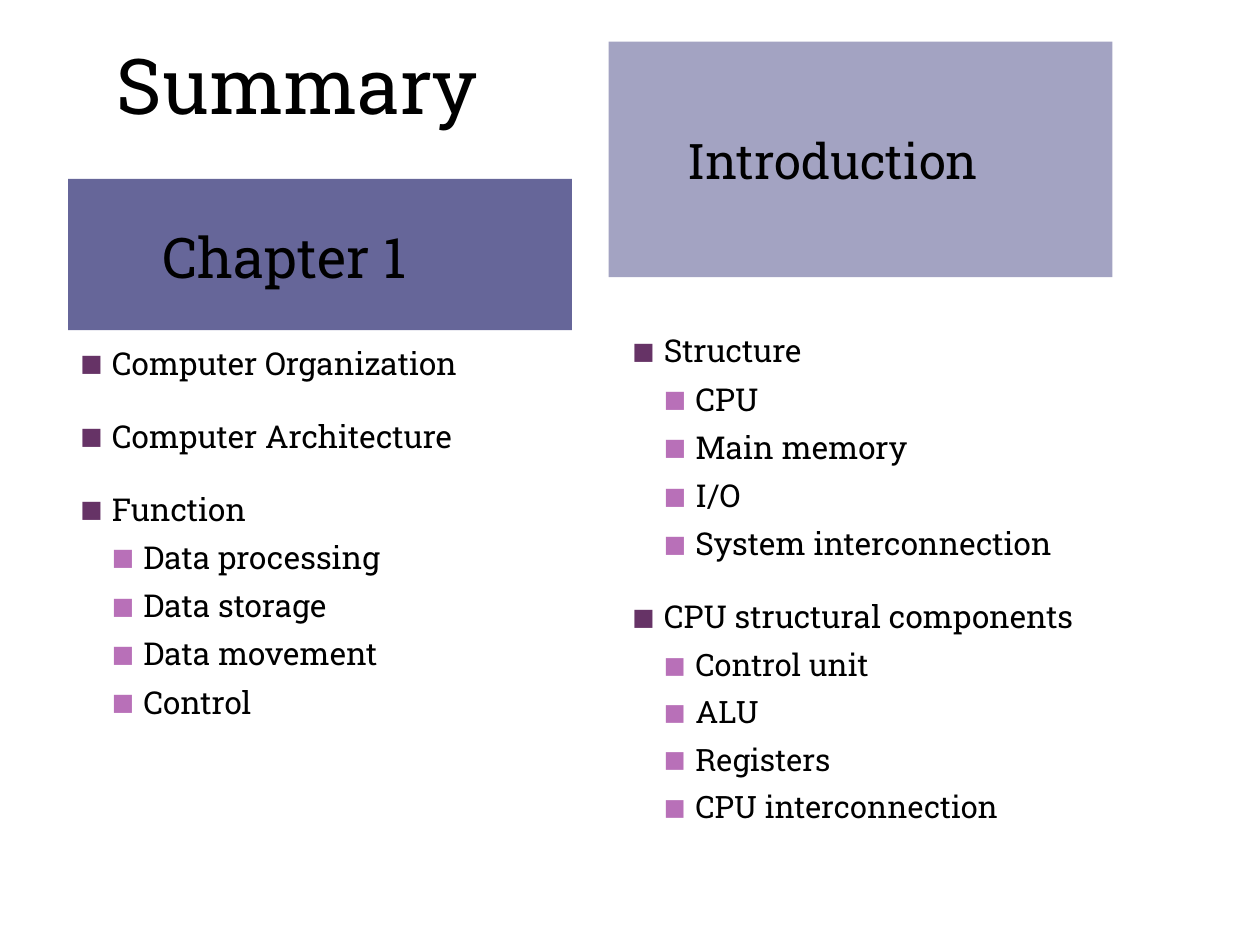
"""Build the two-column summary slide for the introduction chapter."""
from lxml.etree import SubElement
from pptx import Presentation
from pptx.dml.color import RGBColor
from pptx.enum.shapes import MSO_SHAPE as Shape
from pptx.enum.text import MSO_ANCHOR as Anchor, PP_ALIGN as Align
from pptx.oxml.ns import qn
from pptx.util import Inches, Pt

FONT = "Roboto Slab"
LEVELS = [
    {"indent": 0.25, "before": 20, "colour": "663366"},
    {"indent": 0.5, "before": 6, "colour": "B870B8"},
]
BANNERS = [
    ("Chapter 1", 32, "666699", (0.54, 1.42, 4, 1.2), (0.1, 0.03, 0.66, 0)),
    ("Introduction", 28, "A3A3C2", (4.83, 0.33, 4, 1.87), (0.1, 0.01, 0.54, 0)),
]
COLUMNS = [
    ((0.54, 2.68, 4, 4.02), [
        ("Computer Organization", 18, []),
        ("Computer Architecture", 18, []),
        ("Function", 18, ["Data processing", "Data storage", "Data movement", "Control"]),
    ]),
    ((4.92, 2.58, 4, 4.33), [
        ("Structure", 18, ["CPU", "Main memory", "I/O", "System interconnection"]),
        ("CPU structural components", 17.6,
         ["Control unit", "ALU", "Registers", "CPU interconnection"]),
    ]),
]


def write(para, text, size):
    span = para.add_run()
    span.text = text
    style = {"name": FONT, "size": Pt(size)}
    for name, value in style.items():
        setattr(span.font, name, value)
    span.font.color.rgb = RGBColor.from_string("000000")


def add_bullet(para, indent, before, colour):
    para.space_before = Pt(before)
    props = para._p.get_or_add_pPr()
    props.set("marL", str(Inches(indent)))
    props.set("indent", str(Inches(-0.25)))
    tint = SubElement(props, qn("a:buClr"))
    SubElement(tint, qn("a:srgbClr"), val=colour)
    SubElement(props, qn("a:buSzPct"), val="75000")
    SubElement(props, qn("a:buFont"), typeface=FONT)
    SubElement(props, qn("a:buChar"), char="■")


deck = Presentation()
deck.slide_width, deck.slide_height = Inches(10), Inches(7.5)
page = deck.slides.add_slide(deck.slide_layouts[6])

title = page.shapes.add_textbox(*map(Inches, (0.83, 0.25, 4.45, 1.22))).text_frame
title.word_wrap = True
write(title.paragraphs[0], "Summary", 44)

for place, topics in COLUMNS:
    frame = page.shapes.add_textbox(*map(Inches, place)).text_frame
    frame.word_wrap = True
    para = frame.paragraphs[0]
    for topic, detail_size, details in topics:
        lines = [(topic, 18, 0)] + [(detail, detail_size, 1) for detail in details]
        for text, size, level in lines:
            para = frame.add_paragraph() if para.runs else para
            para.level = level
            add_bullet(para, **LEVELS[level])
            write(para, text, size)

for text, size, colour, place, margins in BANNERS:
    box = page.shapes.add_shape(Shape.RECTANGLE, *map(Inches, place))
    box.shadow.inherit = False
    box.fill.solid()
    box.fill.fore_color.rgb = RGBColor.from_string(colour)
    box.line.fill.background()
    frame = box.text_frame
    frame.word_wrap, frame.vertical_anchor = True, Anchor.MIDDLE
    for side, margin in zip(("left", "top", "right", "bottom"), margins):
        setattr(frame, f"margin_{side}", Inches(margin))
    frame.paragraphs[0].alignment = Align.CENTER
    write(frame.paragraphs[0], text, size)

deck.save("out.pptx")
